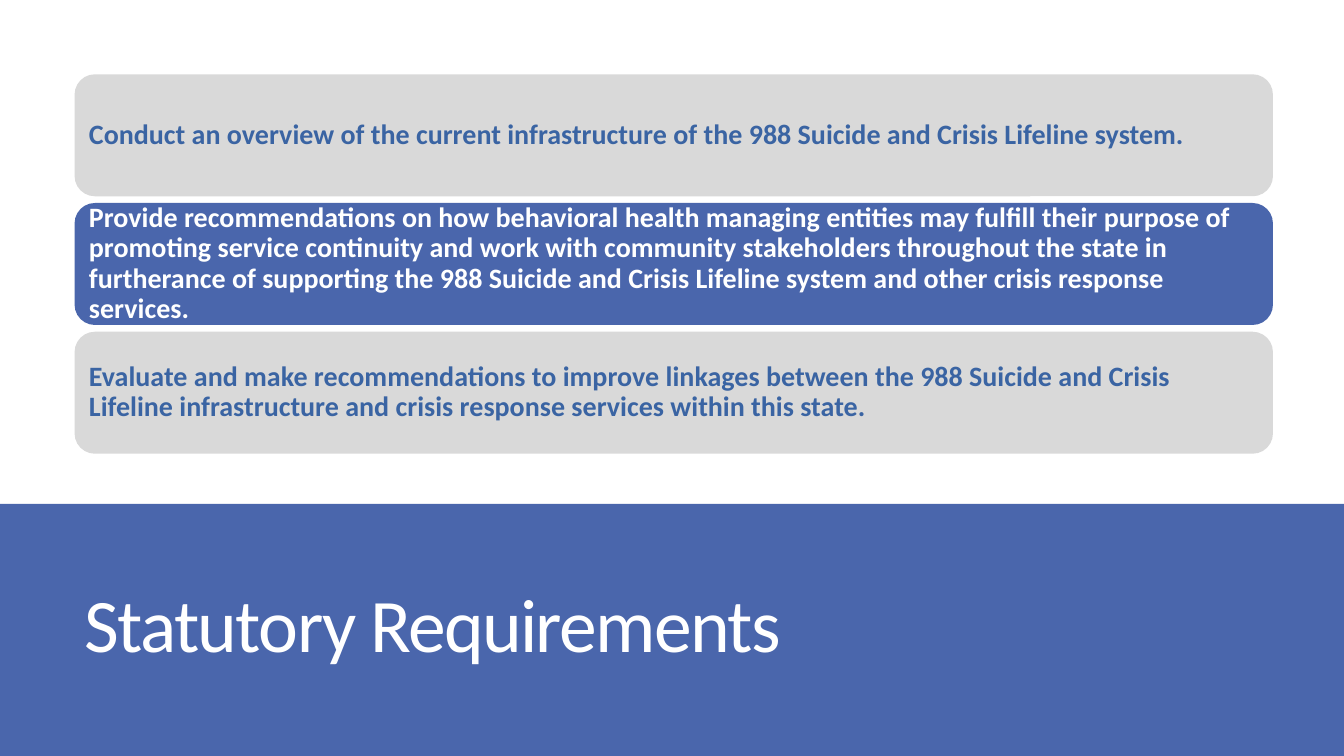
from pptx import Presentation
from pptx.dml.color import RGBColor
from pptx.enum.shapes import MSO_SHAPE
from pptx.enum.text import MSO_ANCHOR, MSO_AUTO_SIZE, PP_ALIGN
from pptx.util import Pt

RECT = MSO_SHAPE.RECTANGLE
ROUND = MSO_SHAPE.ROUNDED_RECTANGLE
MIDDLE = MSO_ANCHOR.MIDDLE
FIXED = MSO_AUTO_SIZE.NONE
LEFT = PP_ALIGN.LEFT

BLUE = RGBColor(0x4A, 0x66, 0xAC)
INK = RGBColor(0x3A, 0x64, 0xA3)
GRAY = RGBColor(0xD9, 0xD9, 0xD9)
WHITE = RGBColor(0xFF, 0xFF, 0xFF)
FACE = "Calibri"
WIDE, HIGH = 960, 540

DUTIES = [
    ("Conduct an overview of the current infrastructure of the 988 Suicide "
     "and Crisis Lifeline system.", GRAY, INK),
    ("Provide recommendations on how behavioral health managing entities may "
     "fulfill their purpose of promoting service continuity and work with "
     "community stakeholders throughout the state in furtherance of "
     "supporting the 988 Suicide and Crisis Lifeline system and other crisis "
     "response services.", BLUE, WHITE),
    ("Evaluate and make recommendations to improve linkages between the 988 "
     "Suicide and Crisis Lifeline infrastructure and crisis response services "
     "within this state.", GRAY, INK),
]


def add_panel(slide, kind, box, fill):
    """Add a plain filled shape without line or shadow."""
    panel = slide.shapes.add_shape(kind, *map(Pt, box))
    panel.shadow.inherit = False
    panel.fill.solid()
    panel.fill.fore_color.rgb = fill
    panel.line.fill.background()
    return panel


def set_text(shape, text, size, color, bold, pitch):
    """Fill a shape with one left-aligned, vertically centred paragraph."""
    frame = shape.text_frame
    frame.text = text
    frame.word_wrap = True
    frame.auto_size = FIXED
    frame.vertical_anchor = MIDDLE
    para = frame.paragraphs[0]
    para.alignment = LEFT
    para.line_spacing = pitch
    para.space_before = Pt(0)
    font = para.font
    font.name, font.size, font.bold = FACE, Pt(size), bold
    font.color.rgb = color
    return frame


def add_duties(slide, box, gap):
    """Stack the duty panels evenly in the box."""
    left, top, width, height = box
    step = (height + gap) / len(DUTIES)
    for row, (text, fill, color) in enumerate(DUTIES):
        place = (left, top + row * step, width, step - gap)
        panel = add_panel(slide, ROUND, place, fill)
        frame = set_text(panel, text, 20, color, True, 0.9)
        frame.margin_left = frame.margin_right = Pt(6)
        frame.margin_top = frame.margin_bottom = Pt(6)


def add_banner(slide, box):
    """Draw the bottom band and set the title on it."""
    left, top, width, height = box
    band = add_panel(slide, RECT, box, BLUE)
    title = slide.shapes.title
    band.element.addnext(title.element)
    title.left, title.top = Pt(left + 53.3), Pt(top + 44.6)
    title.width, title.height = Pt(width - 111.8), Pt(height / 2)
    frame = set_text(title, "Statutory Requirements", 54, WHITE, False, 0.85)
    frame.paragraphs[0].runs[0].font._element.set("spc", "-120")


def main():
    """Build and save the slide."""
    deck = Presentation()
    deck.slide_width, deck.slide_height = Pt(WIDE), Pt(HIGH)
    slide = deck.slides.add_slide(deck.slide_layouts[5])
    add_banner(slide, (0, 360, WIDE, 180))
    add_duties(slide, (53.3, 53.1, 856, 271), 4.8)
    deck.save("out.pptx")


if __name__ == "__main__":
    main()
